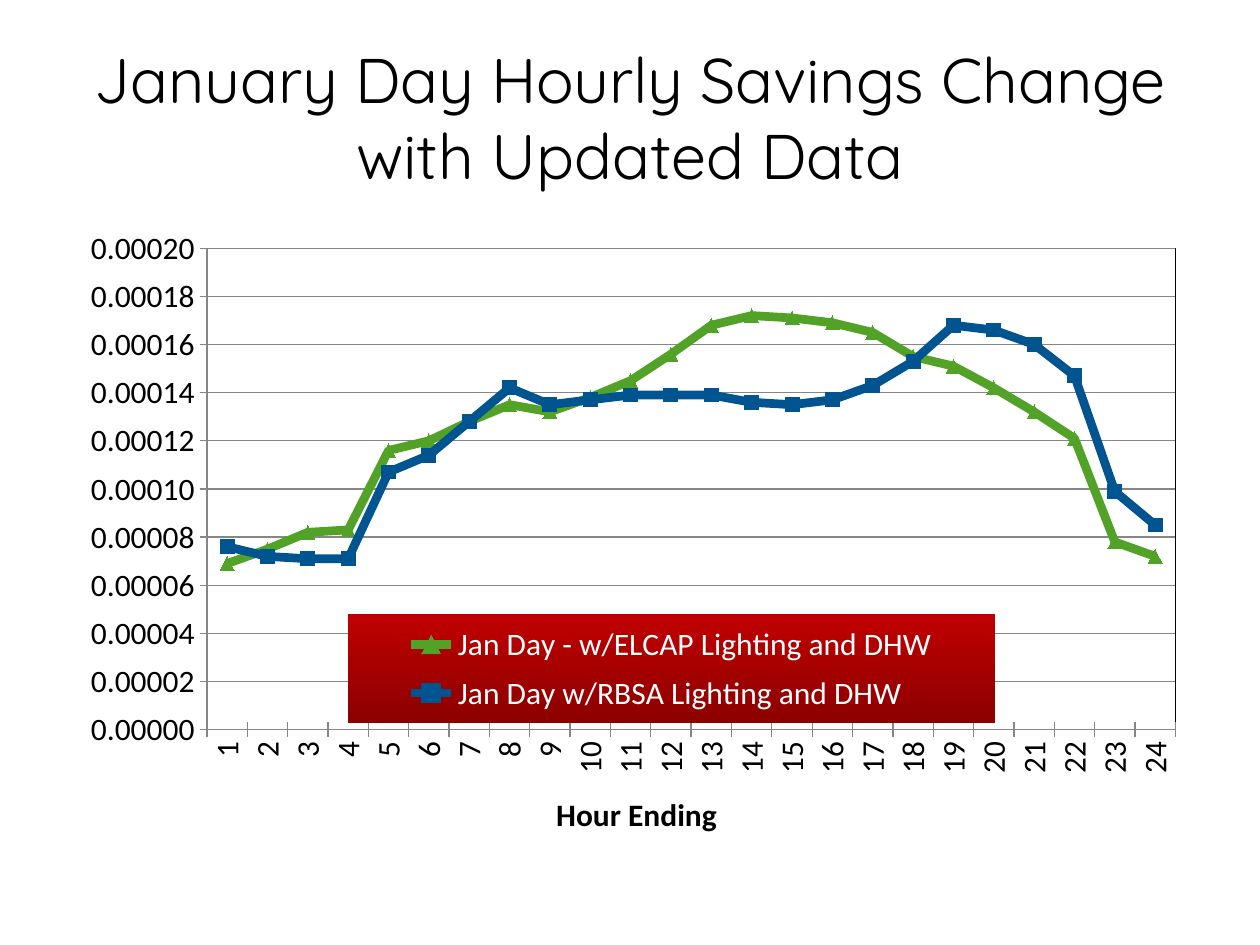
from lxml import etree
from pptx import Presentation
from pptx.chart.data import CategoryChartData
from pptx.dml.color import RGBColor
from pptx.enum.chart import (XL_CHART_TYPE, XL_LEGEND_POSITION,
                             XL_MARKER_STYLE, XL_TICK_MARK)
from pptx.enum.text import MSO_ANCHOR, PP_ALIGN
from pptx.oxml import parse_xml
from pptx.oxml.ns import nsdecls, qn
from pptx.util import Inches, Pt

LINE = XL_CHART_TYPE.LINE_MARKERS
RIGHT = XL_LEGEND_POSITION.RIGHT
CROSS = XL_TICK_MARK.CROSS
TRI, BOX = XL_MARKER_STYLE.TRIANGLE, XL_MARKER_STYLE.SQUARE
MID, MIDDLE = PP_ALIGN.CENTER, MSO_ANCHOR.MIDDLE

THEME = {
    "head": {"name": "Quicksand", "size": Pt(36)},
    "body": {"name": "Calibri", "size": Pt(18)},
    "black": "000000", "white": "FFFFFF", "grid": "868686",
    "green": "53A228", "blue": "005490", "cyan": "00B0F0",
    "red": "C00000", "dark": "8C0000",
}


def style(font, kind, tone, bold=False):
    for key, val in {**THEME[kind], "bold": bold}.items():
        setattr(font, key, val)
    font.color.rgb = RGBColor.from_string(THEME[tone])


def place(node, after, **spots):
    """Put a manual layout, in fractions of the chart, after a child of node."""
    for old in node.findall(qn("c:layout")):
        node.remove(old)
    box = etree.Element(qn("c:layout"))
    man = etree.SubElement(box, qn("c:manualLayout"))
    for key, val in spots.items():
        etree.SubElement(man, qn("c:" + key)).set("val", str(val))
    if after is None:
        node.insert(0, box)
    else:
        node.find(qn(after)).addnext(box)


prs = Presentation()
prs.slide_width, prs.slide_height = Inches(10), Inches(7.5)
slide = prs.slides.add_slide(prs.slide_layouts[5])

# Title
head = slide.shapes.title
head.left, head.top = Inches(0.5), Inches(0.3)
head.width, head.height = Inches(9), Inches(1.25)
frame = head.text_frame
frame.text = "January Day Hourly Savings Change with Updated Data"
frame.vertical_anchor, frame.word_wrap = MIDDLE, True
frame.paragraphs[0].alignment = MID
style(frame.paragraphs[0].runs[0].font, "head", "black")

# Hourly savings, in millionths
SETS = [
    ("Jan Day - w/ELCAP Lighting and DHW", "green", TRI, "green",
     [69, 75, 82, 83, 116, 120, 128, 135, 132, 138, 145, 156,
      168, 172, 171, 169, 165, 155, 151, 142, 132, 121, 78, 72]),
    ("Jan Day w/RBSA Lighting and DHW", "blue", BOX, "cyan",
     [76, 72, 71, 71, 107, 114, 128, 142, 135, 137, 139, 139,
      139, 136, 135, 137, 143, 153, 168, 166, 160, 147, 99, 85]),
]
data = CategoryChartData(number_format="#,##0.00000")
data.categories = [str(hour) for hour in range(1, 25)]
for name, _, _, _, vals in SETS:
    data.add_series(name, [val / 1000000 for val in vals])

# Line chart
chart = slide.shapes.add_chart(LINE, Inches(0.5), Inches(1.75), Inches(9),
                               Inches(4.95), data).chart
chart.has_title = False
style(chart.font, "body", "black")
plot = chart.plots[0]
plot.vary_by_categories = False
for line, (_, tone, mark, fill, _) in zip(plot.series, SETS):
    line.smooth = False
    line.format.line.width = Pt(5)
    line.format.line.color.rgb = RGBColor.from_string(THEME[tone])
    line.marker.style, line.marker.size = mark, 8
    look, rgb = line.marker.format, RGBColor.from_string(THEME[fill])
    look.fill.solid()
    look.fill.fore_color.rgb = rgb
    look.line.color.rgb = rgb

# Axes
hours, vals = chart.category_axis, chart.value_axis
formats = {"minimum_scale": 0, "maximum_scale": 0.0002, "major_unit": 0.00002,
           "has_major_gridlines": True}
for key, val in formats.items():
    setattr(vals, key, val)
vals.tick_labels.number_format = "#,##0.00000"
vals.tick_labels.number_format_is_linked = False
gray = RGBColor.from_string(THEME["grid"])
for axis in (hours, vals):
    axis.major_tick_mark = CROSS
    axis.format.line.color.rgb = gray
    style(axis.tick_labels.font, "body", "black")
vals.major_gridlines.format.line.color.rgb = gray
turn = hours._element.find(qn("c:txPr")).find(qn("a:bodyPr"))
turn.set("rot", "-5400000")
turn.set("vert", "horz")

label = hours.axis_title
label.text_frame.text = "Hour Ending"
style(label.text_frame.paragraphs[0].runs[0].font, "body", "black", True)
place(label._element, "c:tx", xMode="edge", yMode="edge", x=0.43, y=0.92)

# Plot area with a thin border
area = chart._chartSpace.chart.plotArea
place(area, None, layoutTarget="inner", xMode="edge", yMode="edge",
      x=0.127, y=0.045, w=0.854, h=0.781)
area.append(parse_xml(
    f'<c:spPr {nsdecls("c", "a")}><a:noFill/><a:ln w="9525"><a:solidFill>'
    f'<a:srgbClr val="{THEME["black"]}"/></a:solidFill></a:ln></c:spPr>'))

# Legend on a red gradient
chart.has_legend = True
key = chart.legend
key.position, key.include_in_layout = RIGHT, True
style(key.font, "body", "white")
place(key._element, "c:legendPos", xMode="edge", yMode="edge",
      x=0.251, y=0.639, w=0.571, h=0.176)
key._element.find(qn("c:txPr")).addprevious(parse_xml(
    f'<c:spPr {nsdecls("c", "a")}><a:gradFill><a:gsLst>'
    f'<a:gs pos="0"><a:srgbClr val="{THEME["red"]}"/></a:gs>'
    f'<a:gs pos="100000"><a:srgbClr val="{THEME["dark"]}"/></a:gs>'
    f'</a:gsLst><a:lin ang="5400000" scaled="0"/></a:gradFill>'
    f'<a:ln><a:noFill/></a:ln></c:spPr>'))

prs.save("out.pptx")
